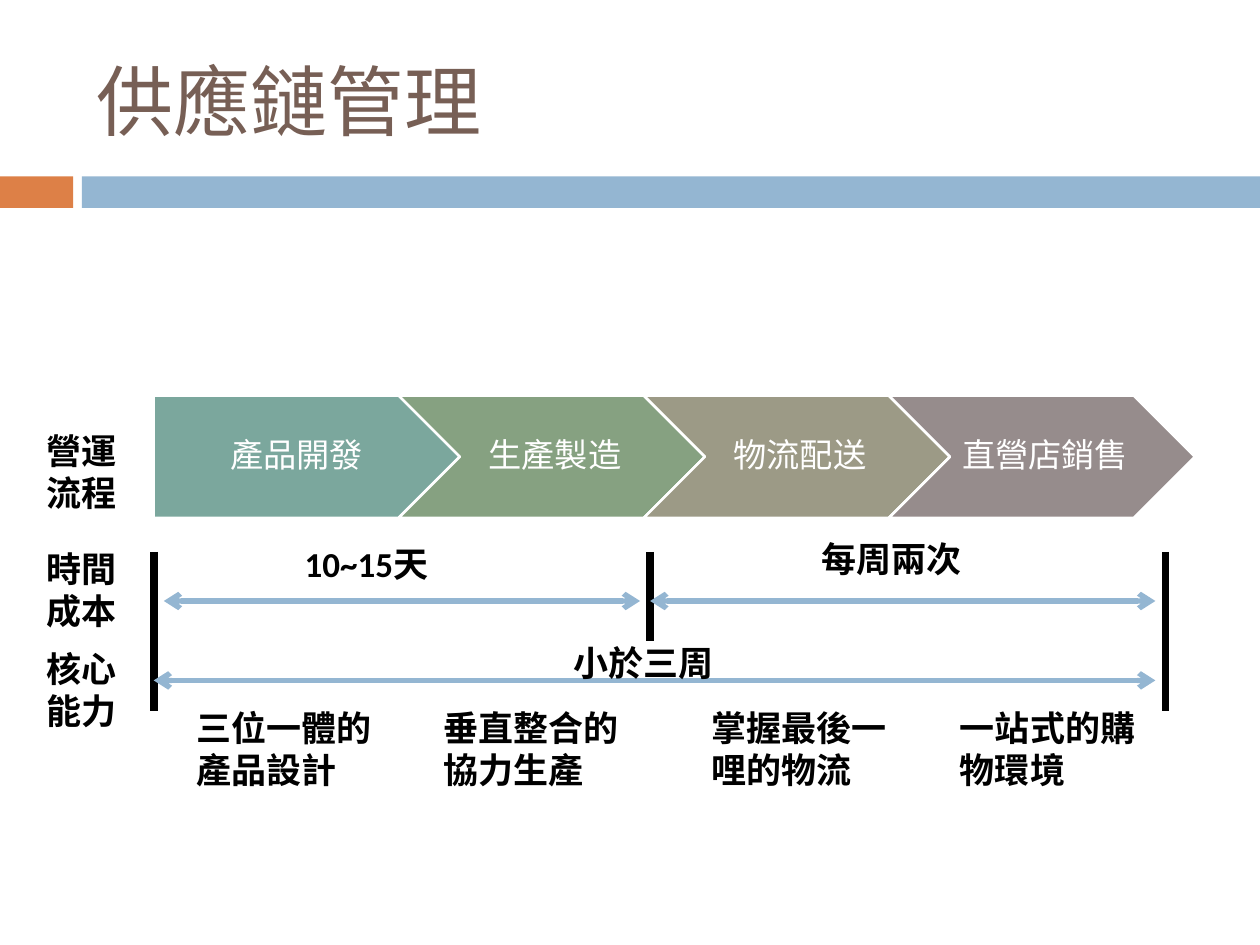
import pptx
import pptx.util
import pptx.dml.color
import pptx.enum.shapes
import pptx.enum.text
import pptx.oxml.ns
from lxml import etree

Pt = pptx.util.Pt
Kind = pptx.enum.shapes.MSO_SHAPE
Align = pptx.enum.text.PP_ALIGN
Anchor = pptx.enum.text.MSO_ANCHOR
qn = pptx.oxml.ns.qn


def color(text):
    return pptx.dml.color.RGBColor.from_string(text)


class Board:
    font = "Calibri"
    ink = "000000"
    white = "FFFFFF"
    blue = "94B6D2"
    cols, rows = 100, 75

    def __init__(self, deck):
        self.wide, self.high = deck.slide_width, deck.slide_height
        self.slide = deck.slides.add_slide(deck.slide_layouts[6])

    def x(self, col):
        return round(self.wide * col / self.cols)

    def y(self, row):
        return round(self.high * row / self.rows)

    def area(self, col, row, width, height):
        return self.x(col), self.y(row), self.x(width), self.y(height)

    def words(self, frame, lines, size, tint, bold=False):
        frame.word_wrap = True
        for i, line in enumerate(lines):
            para = frame.add_paragraph() if i else frame.paragraphs[0]
            run = para.add_run()
            run.text = line
            run.font.name = self.font
            run.font.size = Pt(size)
            run.font.bold = bold
            run.font.color.rgb = color(tint)

    def block(self, kind, place, fill, edge=None):
        shape = self.slide.shapes.add_shape(kind, *self.area(*place))
        shape.shadow.inherit = False
        shape.fill.solid()
        shape.fill.fore_color.rgb = color(fill)
        if edge:
            shape.line.color.rgb = color(edge)
            shape.line.width = Pt(1.5)
        else:
            shape.line.fill.background()
        return shape

    def step(self, kind, place, fill, text, inset):
        frame = self.block(kind, place, fill, self.white).text_frame
        self.words(frame, [text], 19, self.white)
        frame.vertical_anchor = Anchor.MIDDLE
        frame.margin_left, frame.margin_right = self.x(inset), self.x(0.3)
        frame.margin_top = frame.margin_bottom = self.y(0.6)
        frame.paragraphs[0].alignment = Align.CENTER
        frame.paragraphs[0].line_spacing = 0.9

    def label(self, place, *lines, size=20, tint=ink, bold=True):
        frame = self.slide.shapes.add_textbox(*self.area(*place)).text_frame
        self.words(frame, lines, size, tint, bold)
        return frame

    def line(self, start, end, tint, width, heads=False):
        link = self.slide.shapes.add_connector(
            pptx.enum.shapes.MSO_CONNECTOR.STRAIGHT,
            self.x(start[0]), self.y(start[1]), self.x(end[0]), self.y(end[1]))
        link.line.color.rgb = color(tint)
        link.line.width = Pt(width)
        props = link.element.spPr
        if heads:
            for tag in ("a:headEnd", "a:tailEnd"):
                etree.SubElement(props.find(qn("a:ln")), qn(tag), type="arrow")
        etree.SubElement(props, qn("a:effectLst"))


def main():
    deck = pptx.Presentation()
    deck.slide_width = pptx.util.Inches(10)
    deck.slide_height = pptx.util.Inches(7.5)
    board = Board(deck)

    board.block(Kind.RECTANGLE, (0, 14, 5.8, 2.5), "DD8047")
    board.block(Kind.RECTANGLE, (6.5, 14, 93.5, 2.5), board.blue)
    title = board.label((6.7, 2.5, 89.2, 10.8), "供應鏈管理",
                        size=44, tint="775F55", bold=False)
    title.vertical_anchor = Anchor.MIDDLE

    steps = [("產品開發", "7BA79D"), ("生產製造", "86A181"),
             ("物流配送", "9C9A86"), ("直營店銷售", "968C8C")]
    for i, (text, fill) in enumerate(steps):
        kind, inset = (Kind.CHEVRON, 0.8) if i else (Kind.PENTAGON, 1.1)
        board.step(kind, (12.2 + 19.45 * i, 31.4, 24.3, 9.7), fill, text, inset)

    for col, foot in [(12.2, 56.4), (92.5, 56.4), (51.6, 50.9)]:
        board.line((col, 43.8), (col, foot), board.ink, 4.5)
    for left, right, row in [(13, 50.8, 47.7), (51.6, 91.7, 47.7), (12.2, 91.7, 54)]:
        board.line((left, row), (right, row), board.blue, 3, heads=True)

    for row, text in [(33.6, "營運流程"), (43, "時間成本"), (50.9, "核心能力")]:
        board.label((2.7, row, 8.7, 7.7), text)
    skills = [(14.6, ["三位一體的", "產品設計"]), (34.2, ["垂直整合的協力生產"]),
              (55.5, ["掌握最後一哩的物流"]), (75.2, ["一站式的購物環境"])]
    for col, lines in skills:
        board.label((col, 55.6, 16.5, 7.7), *lines)
    times = [(23.2, 42.6, "10~15天"), (64.2, 42.2, "每周兩次"), (44.5, 50.4, "小於三周")]
    for col, row, text in times:
        board.label((col, row, 16.5, 4.4), text)

    deck.save("out.pptx")


if __name__ == "__main__":
    main()
